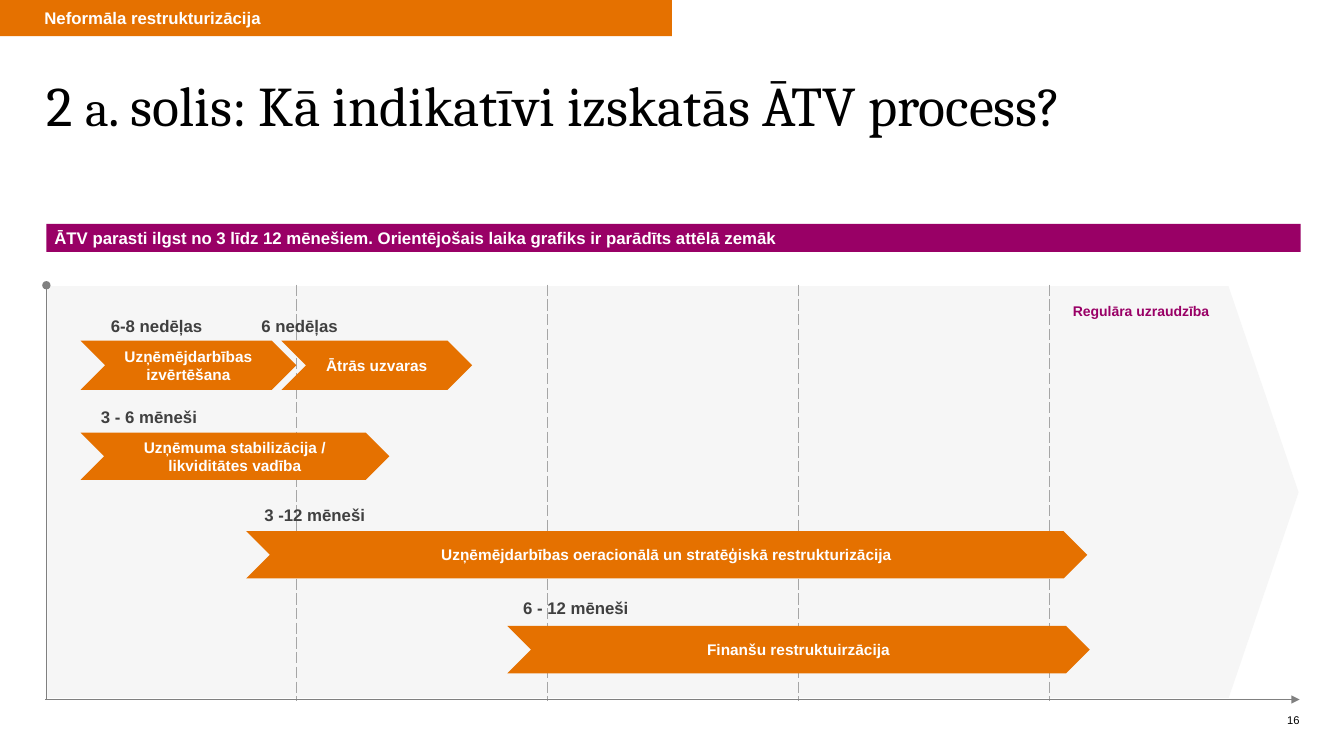
import pptx
import pptx.util
import pptx.dml.color
import pptx.enum.shapes
import pptx.enum.text
import pptx.oxml
import pptx.oxml.ns

Inch = pptx.util.Inches
Pt = pptx.util.Pt
RGBColor = pptx.dml.color.RGBColor
Shape = pptx.enum.shapes.MSO_SHAPE
Align = pptx.enum.text.PP_ALIGN
Anchor = pptx.enum.text.MSO_ANCHOR

ORANGE = RGBColor(0xE5, 0x71, 0x00)
PLUM = RGBColor(0x99, 0x00, 0x66)
WHITE = RGBColor(0xFF, 0xFF, 0xFF)
BLACK = RGBColor(0, 0, 0)
PALE = RGBColor(0xD9, 0xD9, 0xD9)
DASH = RGBColor(0xA6, 0xA6, 0xA6)
GRAY = RGBColor(0x80, 0x80, 0x80)
DARK = RGBColor(0x40, 0x40, 0x40)

TITLE = [("2 ", 40), ("a", 36), (". solis: Kā indikatīvi izskatās ĀTV process?", 40)]
TAG = "Neformāla restrukturizācija"
CLAIM = "ĀTV parasti ilgst no 3 līdz 12 mēnešiem. Orientējošais laika grafiks ir parādīts attēlā zemāk"
WATCH = "Regulāra uzraudzība "
PAGE = "16"
# columns and rows of the time grid: start, span, top, height
BARS = [
    ("Uzņēmējdarbības izvērtēšana", 0.14, 0.86, 1.17, 1.04),
    ("Ātrās uzvaras", 0.94, 0.76, 1.17, 1.04),
    ("Uzņēmuma stabilizācija / likviditātes vadība", 0.14, 1.23, 3.11, 1),
    ("Uzņēmējdarbības oeracionālā un stratēģiskā restrukturizācija", 0.8, 3.35, 5.19, 1),
    ("Finanšu restruktuirzācija", 1.84, 2.32, 7.19, 1),
]
TERMS = [
    ("6-8 nedēļas", 0.17, 0.53),
    ("6 nedēļas", 0.74, 0.53),
    ("3 - 6 mēneši", 0.14, 2.47),
    ("3 -12 mēneši", 0.8, 4.53),
    ("6 - 12 mēneši", 1.84, 6.49),
]

WIDE, HIGH = 13.33, 7.5
LEFT, TOP, TALL = 0.45, 2.83, 4.11
COLS, COL, ROW = 5, 2.49, 0.47
BASE = TOP + TALL
EDGE = 12.89
PAD = (0.1, 0.05, 0.1, 0.05)

deck = pptx.Presentation()
deck.slide_width, deck.slide_height = Inch(WIDE), Inch(HIGH)
slide = deck.slides.add_slide(deck.slide_layouts[5])
shapes = slide.shapes


def box(*dims):
    return [Inch(dim) for dim in dims]


def write(item, runs, color, align=Align.LEFT, font="Arial", bold=True,
          pad=PAD, anchor=Anchor.MIDDLE, after=0):
    frame = item.text_frame
    frame.word_wrap = True
    frame.auto_size = pptx.enum.text.MSO_AUTO_SIZE.NONE
    frame.vertical_anchor = anchor
    (frame.margin_left, frame.margin_top,
     frame.margin_right, frame.margin_bottom) = box(*pad)
    para = frame.paragraphs[0]
    para.alignment = align
    para.space_after = Pt(after)
    for text, size in runs:
        run = para.add_run()
        run.text = text
        run.font.size = Pt(size)
        run.font.name = font
        run.font.bold = bold
        run.font.color.rgb = color
    return para


def draw(kind, dims, fill):
    item = shapes.add_shape(kind, *box(*dims))
    item.shadow.inherit = False
    item.fill.solid()
    item.fill.fore_color.rgb = fill
    item.line.fill.background()
    return item


def node(tag, attrs="", inner=""):
    space = pptx.oxml.ns.nsdecls("a")
    return pptx.oxml.parse_xml(f"<a:{tag} {space} {attrs}>{inner}</a:{tag}>")


def axis(start, end, tip, head):
    line = shapes.add_connector(pptx.enum.shapes.MSO_CONNECTOR.STRAIGHT,
                                *box(*start, *end))
    line.line.color.rgb = GRAY
    line.line.width = Pt(0.5)
    line.line._get_or_add_ln().append(node(tip, f'type="{head}"'))
    line._element.spPr.append(node("effectLst"))


def grid():
    table = shapes.add_table(1, COLS, *box(LEFT, TOP, COLS * COL, TALL)).table
    table.first_row = table.horz_banding = False
    table.rows[0].height = Inch(TALL)
    for spot, cell in enumerate(table.rows[0].cells):
        table.columns[spot].width = Inch(COL)
        sides = [
            ("lnL", WHITE if spot == 0 else DASH, 1),
            ("lnR", WHITE if spot == COLS - 1 else DASH, 1),
            ("lnT", WHITE, 1),
            ("lnB", WHITE, 3),
        ]
        props = cell._tc.get_or_add_tcPr()
        for side, color, width in sides:
            style = "sysDash" if color == DASH else "solid"
            props.append(node(
                side, f'w="{Pt(width)}"',
                f'<a:solidFill><a:srgbClr val="{color}"/></a:solidFill>'
                f'<a:prstDash val="{style}"/>'))
        cell.fill.background()


def main():
    plate = draw(Shape.PENTAGON, (LEFT + 0.02, TOP, 12.41, TALL), PALE)
    plate.adjustments[0] = 0.17
    tint = plate._element.spPr.find(".//" + pptx.oxml.ns.qn("a:srgbClr"))
    tint.append(node("alpha", 'val="22000"'))

    title = shapes.title
    title.left, title.top, title.width, title.height = box(0.46, 0.36, 12.43, 1.44)
    para = write(title, TITLE, BLACK, font="Cambria", bold=False, pad=(0,) * 4)
    para.line_spacing = 0.9

    page = shapes.add_textbox(*box(EDGE - 3, 7.08, 3, 0.13))
    write(page, [(PAGE, 8)], BLACK, Align.RIGHT, bold=False, pad=(0,) * 4)

    grid()
    axis((LEFT, BASE), (EDGE, BASE), "tailEnd", "triangle")
    axis((LEFT + 0.01, TOP), (LEFT + 0.01, BASE), "headEnd", "oval")

    for text, start, span, top, tall in BARS:
        dims = (LEFT + start * COL, TOP + top * ROW, span * COL, tall * ROW)
        write(draw(Shape.CHEVRON, dims, ORANGE), [(text, 11)], WHITE, Align.CENTER)
    for text, start, top in TERMS:
        term = shapes.add_textbox(*box(LEFT + start * COL, TOP + top * ROW, 1.36, 0.3))
        write(term, [(text, 12)], DARK, Align.CENTER, anchor=Anchor.TOP, after=2)

    watch = shapes.add_textbox(*box(10.26, 2.95, 2.25, 0.27))
    write(watch, [(WATCH, 10)], PLUM, Align.CENTER,
          pad=(0, 0.05, 0.1, 0.05), anchor=Anchor.TOP)
    tag = draw(Shape.RECTANGLE, (0, 0, WIDE / 2, 0.36), ORANGE)
    write(tag, [(TAG, 12)], WHITE, pad=(0.44, 0.08, 0.1, 0.08))
    claim = draw(Shape.RECTANGLE, (0.46, 2.22, 12.44, 0.28), PLUM)
    write(claim, [(CLAIM, 12)], WHITE, pad=(0.08, 0.04, 0.08, 0.04),
          anchor=Anchor.TOP, after=8)
    deck.save("out.pptx")


if __name__ == "__main__":
    main()
